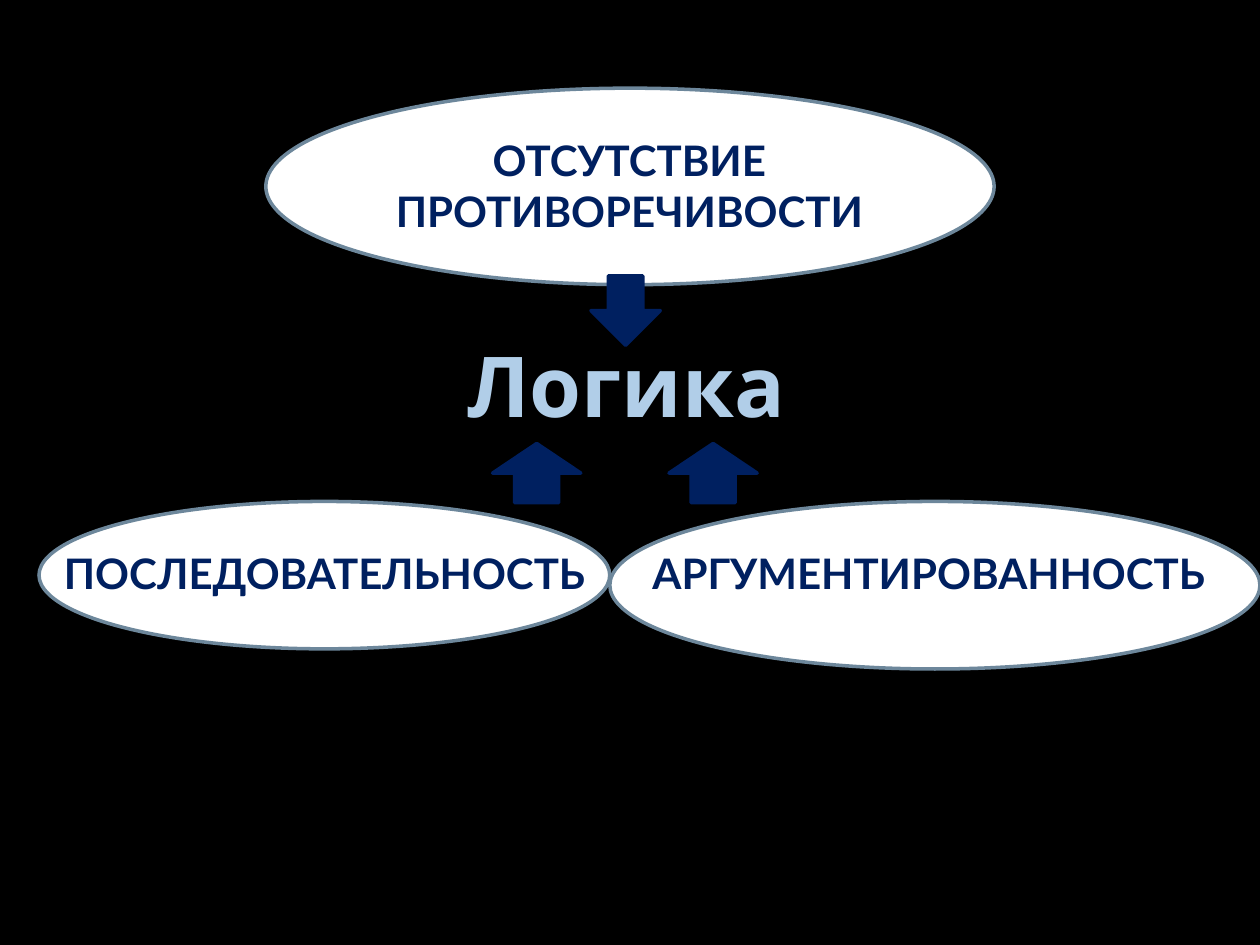
import pptx
import pptx.util
import pptx.dml.color
import pptx.enum.shapes
import pptx.enum.text

Inches = pptx.util.Inches
Shape = pptx.enum.shapes.MSO_SHAPE
Align = pptx.enum.text.PP_ALIGN
Anchor = pptx.enum.text.MSO_ANCHOR


def color(code):
    """Turn a hex string into a colour."""
    return pptx.dml.color.RGBColor.from_string(code)


class Deck:
    """Hold the style and the current slide."""

    navy, white, steel, pale = "002060", "FFFFFF", "6D879B", "B1CEE8"

    def __init__(self, show):
        """Add a black slide with a title."""
        self.slide = show.slides.add_slide(show.slide_layouts[5])
        fill = self.slide.background.fill
        fill.solid()
        fill.fore_color.rgb = color("000000")

    def letter(self, frame, text, face, size, tint, align):
        """Set one bold line of text in a frame."""
        frame.word_wrap = True
        para = frame.paragraphs[0]
        para.text = text
        para.alignment = align
        font = para.font
        font.name, font.size, font.bold = face, pptx.util.Pt(size), True
        font.color.rgb = color(tint)

    def title(self, text, *box):
        """Place and format the title."""
        head = self.slide.shapes.title
        head.left, head.top, head.width, head.height = map(Inches, box)
        head.text_frame.vertical_anchor = Anchor.MIDDLE
        self.letter(head.text_frame, text, "Noto Sans", 48, self.pale, Align.CENTER)

    def shape(self, kind, fill, line, *box):
        """Draw a filled and outlined shape."""
        item = self.slide.shapes.add_shape(kind, *map(Inches, box))
        item.shadow.inherit = False
        item.fill.solid()
        item.fill.fore_color.rgb = color(fill)
        item.line.color.rgb = color(line)
        item.line.width = pptx.util.Pt(2)

    def oval(self, *box):
        """Draw a white ellipse."""
        self.shape(Shape.OVAL, self.white, self.steel, *box)

    def arrow(self, kind, *box):
        """Draw a navy block arrow."""
        self.shape(kind, self.navy, self.navy, *box)

    def label(self, text, *box, align=Align.CENTER):
        """Add a navy caption."""
        frame = self.slide.shapes.add_textbox(*map(Inches, box)).text_frame
        self.letter(frame, text, "Lato", 24, self.navy, align)
        frame.auto_size = pptx.enum.text.MSO_AUTO_SIZE.SHAPE_TO_FIT_TEXT


def main():
    """Build and save the slide."""
    show = pptx.Presentation()
    show.slide_width, show.slide_height = Inches(10), Inches(7.5)
    deck = Deck(show)
    deck.title("Логика", 0.47, 2.42, 9, 1.25)
    deck.oval(4.84, 3.98, 5.16, 1.33)
    deck.oval(2.11, 0.7, 5.78, 1.56)
    deck.oval(0.31, 3.98, 4.53, 1.17)
    deck.label("ПОСЛЕДОВАТЕЛЬНОСТЬ", 0.31, 4.3, 4.53, 0.5)
    deck.label("ОТСУТСТВИЕ ПРОТИВОРЕЧИВОСТИ", 2.34, 1.02, 5.31, 0.91)
    deck.label("АРГУМЕНТИРОВАННОСТЬ", 5.08, 4.3, 4.69, 0.5, align=Align.LEFT)
    deck.arrow(Shape.DOWN_ARROW, 4.69, 2.19, 0.55, 0.55)
    for left in (3.91, 5.31):
        deck.arrow(Shape.UP_ARROW, left, 3.52, 0.7, 0.47)
    show.save("out.pptx")


if __name__ == "__main__":
    main()
